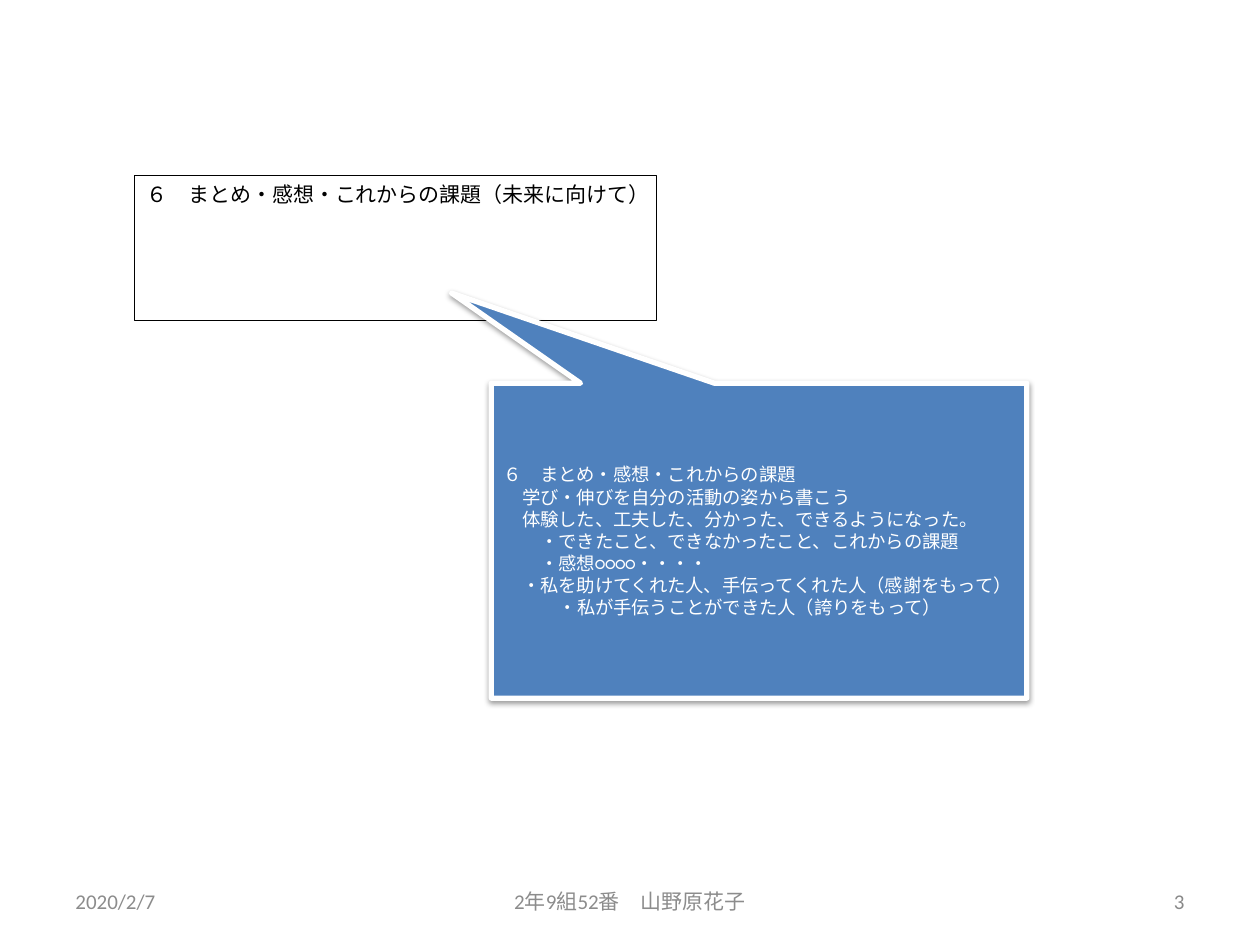
from lxml import etree
from pptx import Presentation
from pptx.dml.color import RGBColor
from pptx.enum.shapes import MSO_SHAPE
from pptx.enum.text import MSO_ANCHOR, PP_ALIGN
from pptx.oxml.ns import qn
from pptx.util import Pt

LEFT, CENTER, RIGHT = PP_ALIGN.LEFT, PP_ALIGN.CENTER, PP_ALIGN.RIGHT
TOP, MIDDLE = MSO_ANCHOR.TOP, MSO_ANCHOR.MIDDLE
RECTANGLE, CALLOUT = MSO_SHAPE.RECTANGLE, MSO_SHAPE.RECTANGULAR_CALLOUT

FONT = "Calibri"
BLANK_LAYOUT = 6
COLORS = {
    "paper": "FFFFFF",
    "ink": "000000",
    "callout": "4F81BD",
    "footer": "8C8C8C",
    "number": "898989",
}

FOOTERS = [
    ("2020/2/7", 36, 168, LEFT, "footer"),
    ("2年9組52番　山野原花子", 246, 228, CENTER, "footer"),
    ("3", 516, 168, RIGHT, "number"),
]
FOOTER_TOP, FOOTER_HEIGHT = 500.5, 28.75

HEADING = [("６　まとめ・感想・これからの課題（未来に向けて）", 0)]
ADVICE = [
    ("６　まとめ・感想・これからの課題", 0),
    ("学び・伸びを自分の活動の姿から書こう", 1),
    ("体験した、工夫した、分かった、できるようになった。", 1),
    ("・できたこと、できなかったこと、これからの課題", 2),
    ("・感想○○○○・・・・", 2),
    ("・私を助けてくれた人、手伝ってくれた人（感謝をもって）", 1),
    ("・私が手伝うことができた人（誇りをもって）", 3),
]
INDENT_STEP = 10.5

PANELS = [
    {"kind": RECTANGLE, "box": (76.5, 100.25, 298.5, 82.75), "lines": HEADING,
     "fill": "paper", "edge": "ink", "edge_width": 0.25, "ink": "ink",
     "size": 12, "anchor": TOP, "tail": (), "shadow": False},
    {"kind": CALLOUT, "box": (280.75, 219, 306, 180), "lines": ADVICE,
     "fill": "callout", "edge": "paper", "edge_width": 3, "ink": "paper",
     "size": 10.5, "anchor": MIDDLE, "tail": (-0.574, -0.786), "shadow": True},
]
SHADOW = {"blurRad": Pt(3.1), "dist": Pt(1.6), "dir": 90 * 60000, "rotWithShape": 0}
SHADOW_OPACITY = 38


def rgb(name):
    return RGBColor.from_string(COLORS[name])


def write(shape, lines, size, ink, align, anchor):
    frame = shape.text_frame
    for name, value in {"word_wrap": True, "vertical_anchor": anchor}.items():
        setattr(frame, name, value)
    for index, (words, level) in enumerate(lines):
        paragraph = frame.add_paragraph() if index else frame.paragraphs[0]
        paragraph.alignment = align
        if level:
            properties = paragraph._p.get_or_add_pPr()
            properties.set("marL", str(Pt(level * INDENT_STEP)))
            properties.set("indent", "0")
        run = paragraph.add_run()
        run.text = words
        for name, value in {"name": FONT, "size": Pt(size)}.items():
            setattr(run.font, name, value)
        run.font.color.rgb = rgb(ink)
        etree.SubElement(run._r.get_or_add_rPr(), qn("a:ea"), typeface=FONT)


def cast_shadow(shape):
    effects = shape._element.spPr.find(qn("a:effectLst"))
    outer = etree.SubElement(effects, qn("a:outerShdw"))
    for name, value in SHADOW.items():
        outer.set(name, str(value))
    tint = etree.SubElement(outer, qn("a:srgbClr"), val=COLORS["ink"])
    etree.SubElement(tint, qn("a:alpha"), val=str(SHADOW_OPACITY * 1000))


def add_panel(slide, panel):
    shape = slide.shapes.add_shape(panel["kind"], *map(Pt, panel["box"]))
    shape.shadow.inherit = False
    shape.fill.solid()
    shape.fill.fore_color.rgb = rgb(panel["fill"])
    shape.line.color.rgb = rgb(panel["edge"])
    shape.line.width = Pt(panel["edge_width"])
    for index, value in enumerate(panel["tail"]):
        shape.adjustments[index] = value
    if panel["shadow"]:
        cast_shadow(shape)
    shape.text_frame.margin_right = 0
    write(shape, panel["lines"], panel["size"], panel["ink"], LEFT, panel["anchor"])


def main():
    deck = Presentation()
    deck.slide_width, deck.slide_height = Pt(720), Pt(540)
    slide = deck.slides.add_slide(deck.slide_layouts[BLANK_LAYOUT])
    for words, left, width, align, ink in FOOTERS:
        box = slide.shapes.add_textbox(
            Pt(left), Pt(FOOTER_TOP), Pt(width), Pt(FOOTER_HEIGHT))
        write(box, [(words, 0)], 12, ink, align, MIDDLE)
    for panel in PANELS:
        add_panel(slide, panel)
    deck.save("out.pptx")


if __name__ == "__main__":
    main()
